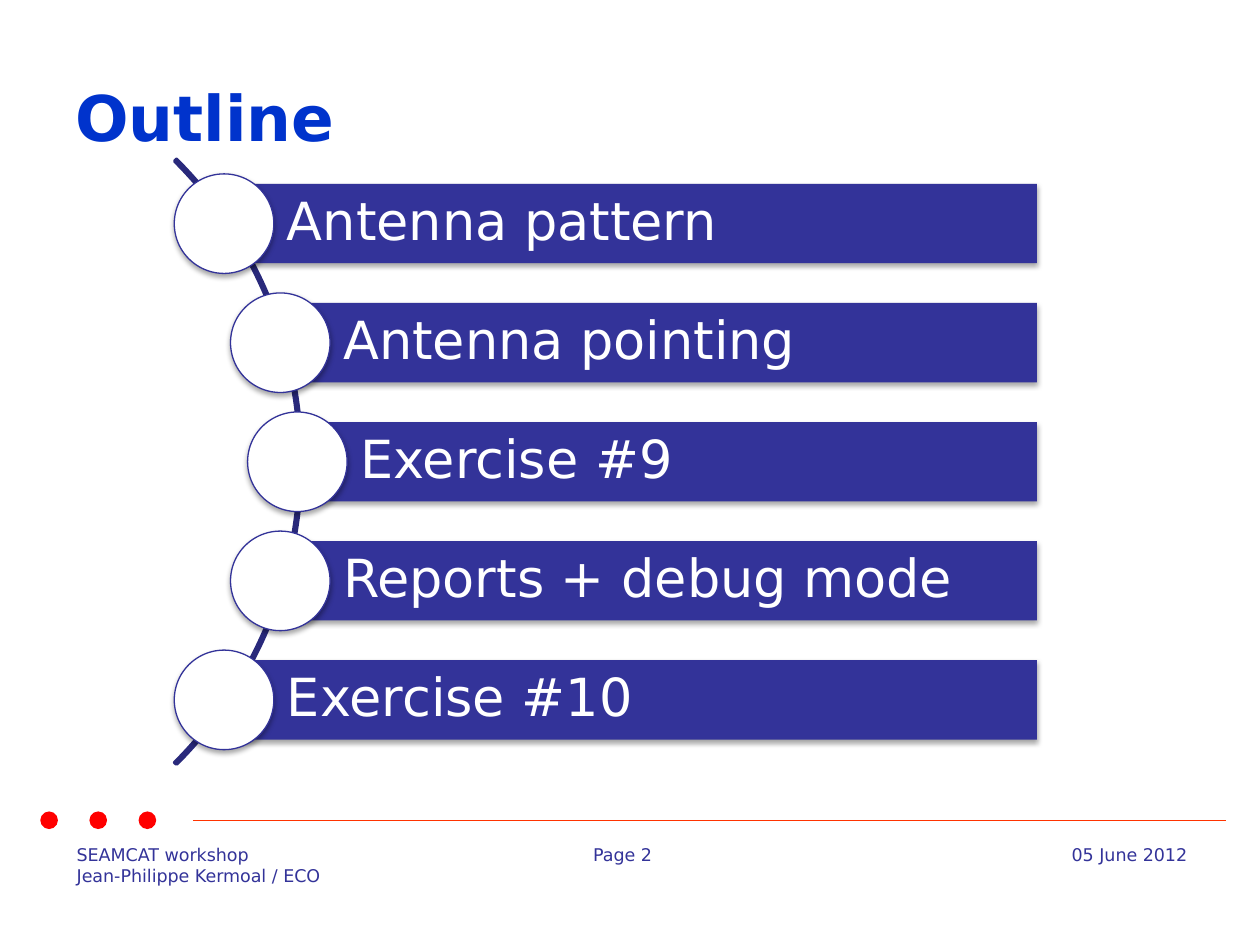
import math
from dataclasses import dataclass

import pptx
import pptx.dml.color
import pptx.enum.shapes
import pptx.enum.text
import pptx.oxml
import pptx.oxml.ns
import pptx.util
from pptx.util import Inches

SHAPE = pptx.enum.shapes.MSO_SHAPE
ALIGN = pptx.enum.text.PP_ALIGN
ANCHOR = pptx.enum.text.MSO_ANCHOR


@dataclass(frozen=True)
class Theme:
    font: str = "DejaVu Sans"
    title_color: str = "0033CC"
    bar: str = "333399"
    arc: str = "29297B"
    white: str = "FFFFFF"
    dot: str = "FF0000"
    rule: str = "FF3300"
    title_size: int = 36
    item_size: int = 30
    footer_size: int = 10


THEME = Theme()
TOPICS = ["Antenna pattern", "Antenna pointing", "Exercise #9",
          "Reports + debug mode", "Exercise #10"]


def rgb(color):
    return pptx.dml.color.RGBColor.from_string(color)


def set_text(shape, text, size, color, bold=False, align=ALIGN.LEFT, anchor=ANCHOR.TOP):
    frame = shape.text_frame
    frame.text = text
    frame.word_wrap = True
    frame.vertical_anchor = anchor
    for paragraph in frame.paragraphs:
        paragraph.alignment = align
        for run in paragraph.runs:
            run.font.name = THEME.font
            run.font.size = pptx.util.Pt(size)
            run.font.bold = bold
            run.font.color.rgb = rgb(color)


def add_text(slide, box, text, size, color, **options):
    shape = slide.shapes.add_textbox(*map(Inches, box))
    set_text(shape, text, size, color, **options)


def add_shape(slide, kind, box, fill=None, line=None, width=0.75):
    shape = slide.shapes.add_shape(kind, *map(Inches, box))
    shape.shadow.inherit = False
    if fill:
        shape.fill.solid()
        shape.fill.fore_color.rgb = rgb(fill)
    else:
        shape.fill.background()
    if line:
        shape.line.color.rgb = rgb(line)
        shape.line.width = pptx.util.Pt(width)
    else:
        shape.line.fill.background()
    return shape


def drop_shadow(shape):
    """Give the shape a soft shadow straight below it."""
    effects = shape._element.spPr.find(pptx.oxml.ns.qn("a:effectLst"))
    effects.append(pptx.oxml.parse_xml(
        f'<a:outerShdw {pptx.oxml.ns.nsdecls("a")} blurRad="{pptx.util.Pt(3.1)}" '
        f'dist="{pptx.util.Pt(1.8)}" dir="5400000" rotWithShape="0">'
        '<a:srgbClr val="000000"><a:alpha val="35000"/></a:srgbClr></a:outerShdw>'))


def build_title(slide, box):
    add_text(slide, box, "Outline", THEME.title_size, THEME.title_color,
             bold=True, anchor=ANCHOR.MIDDLE)


def build_topic_list(slide, box, topics):
    """Bars that start on a curve, each with a circle at its start."""
    left, top, width, height = box
    right, middle = left + width, top + height / 2
    bar_height, circle, radius = 0.63, 0.79, 3.36
    pitch = (height - circle) / (len(topics) - 1)
    center_x = -1.0

    # Curve behind the bars
    diameter = 6.79
    arc = add_shape(slide, SHAPE.BLOCK_ARC,
                    (center_x - diameter / 2, middle - diameter / 2, diameter, diameter),
                    line=THEME.arc, width=2)
    for index, value in enumerate((189, 27, 0.003)):
        arc.adjustments[index] = value

    for index, topic in enumerate(topics):
        y = top + circle / 2 + index * pitch
        x = center_x + math.sqrt(radius ** 2 - (y - middle) ** 2)
        bar = add_shape(slide, SHAPE.RECTANGLE,
                        (x, y - bar_height / 2, right - x, bar_height), THEME.bar)
        drop_shadow(bar)
        set_text(bar, topic, THEME.item_size, THEME.white, anchor=ANCHOR.MIDDLE)
        frame = bar.text_frame
        frame.margin_left = Inches(0.5)
        frame.margin_top = frame.margin_right = frame.margin_bottom = Inches(0.08)
        frame.paragraphs[0].line_spacing = 0.9
        drop_shadow(add_shape(slide, SHAPE.OVAL,
                              (x - circle / 2, y - circle / 2, circle, circle),
                              THEME.white, THEME.bar))


def build_footer(slide, box):
    left, top, width, height = box
    dot, dot_pitch = 0.14, 0.39
    rule_y = top + dot / 2

    # Dots and rule
    for index in range(3):
        add_shape(slide, SHAPE.OVAL, (left + index * dot_pitch, top, dot, dot), THEME.dot)
    rule = slide.shapes.add_connector(
        pptx.enum.shapes.MSO_CONNECTOR.STRAIGHT,
        Inches(left + 1.21), Inches(rule_y), Inches(left + width), Inches(rule_y))
    rule.line.color.rgb = rgb(THEME.rule)
    rule.line.width = pptx.util.Pt(0.75)
    rule._element.spPr.append(pptx.oxml.parse_xml(
        f'<a:effectLst {pptx.oxml.ns.nsdecls("a")}/>'))

    # Event, page and date
    text_top = top + 0.21
    for x, text_width, text, align in (
            (0.19, 2.21, "SEAMCAT workshop\nJean-Philippe Kermoal / ECO", ALIGN.LEFT),
            (4.29, 0.82, "Page 2", ALIGN.LEFT),
            (7.41, 1.79, "05 June 2012", ALIGN.RIGHT)):
        add_text(slide, (left + x, text_top, text_width, height - 0.21), text,
                 THEME.footer_size, THEME.bar, align=align)


def main():
    presentation = pptx.Presentation()
    presentation.slide_width = Inches(10)
    presentation.slide_height = Inches(7.5)
    slide = presentation.slides.add_slide(presentation.slide_layouts[6])
    build_footer(slide, (0.32, 6.44, 9.41, 0.64))
    build_title(slide, (0.5, 0.3, 9, 1.25))
    build_topic_list(slide, (1.38, 1.38, 6.85, 4.57), TOPICS)
    presentation.save("out.pptx")


if __name__ == "__main__":
    main()
